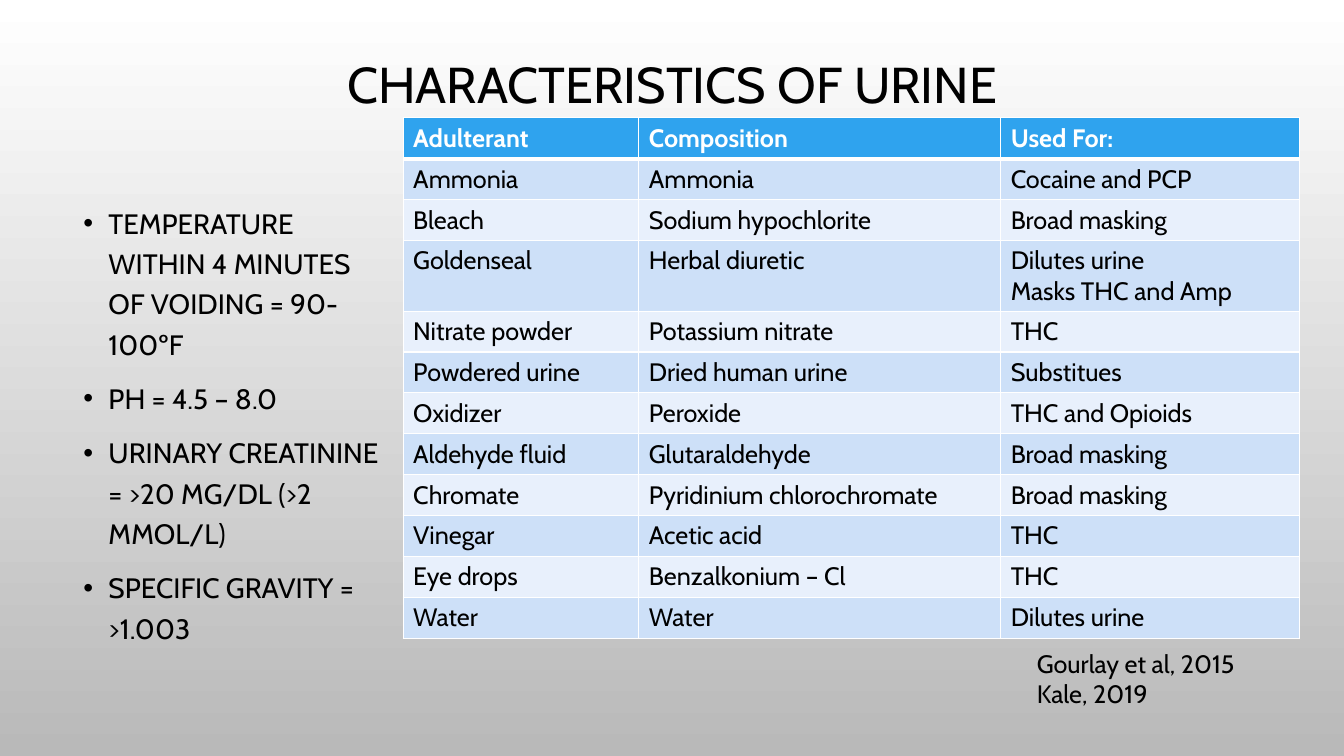
from pptx import Presentation
from pptx.dml.color import RGBColor
from pptx.enum.text import MSO_ANCHOR as Anchor, PP_ALIGN as Align
from pptx.oxml.ns import qn
from pptx.util import Cm, Pt
from lxml.etree import SubElement

FONT = "Cabin"
BLACK = RGBColor(0x00, 0x00, 0x00)
WHITE = RGBColor(0xFF, 0xFF, 0xFF)
GREY = RGBColor(0xB9, 0xB9, 0xB9)
HEADER_BLUE = RGBColor(0x2F, 0xA3, 0xEE)
BANDS = (RGBColor(0xE8, 0xF0, 0xFC), RGBColor(0xCD, 0xE0, 0xF8))

URINE_FACTS = [
    "TEMPERATURE WITHIN 4 MINUTES OF VOIDING = 90-100ºF",
    "PH = 4.5 – 8.0",
    "URINARY CREATININE = >20 MG/DL (>2 MMOL/L)",
    "SPECIFIC GRAVITY = >1.003",
]
ADULTERANTS = [
    ("Adulterant", "Composition", "Used For:"),
    ("Ammonia", "Ammonia", "Cocaine and PCP"),
    ("Bleach", "Sodium hypochlorite", "Broad masking"),
    ("Goldenseal", "Herbal diuretic", "Dilutes urine\nMasks THC and Amp"),
    ("Nitrate powder", "Potassium nitrate", "THC"),
    ("Powdered urine", "Dried human urine", "Substitues"),
    ("Oxidizer", "Peroxide", "THC and Opioids"),
    ("Aldehyde fluid", "Glutaraldehyde", "Broad masking"),
    ("Chromate", "Pyridinium chlorochromate", "Broad masking"),
    ("Vinegar", "Acetic acid", "THC"),
    ("Eye drops", "Benzalkonium – Cl", "THC"),
    ("Water", "Water", "Dilutes urine"),
]
COLUMN_WIDTHS = (5.94, 9.12, 7.52)
ROW_HEIGHT, TWO_LINE_HEIGHT = 1.03, 1.78


def add_bullet(paragraph):
    properties = paragraph._p.get_or_add_pPr()
    properties.set("marL", str(Cm(0.635)))
    properties.set("indent", str(-Cm(0.635)))
    color = SubElement(properties, qn("a:buClr"))
    SubElement(color, qn("a:srgbClr"), val=str(BLACK))
    SubElement(properties, qn("a:buFont"), typeface="Arial")
    SubElement(properties, qn("a:buChar"), char="•")


def write_text(frame, text, size=18, color=BLACK, bold=False, align=Align.LEFT,
               line_spacing=None, space_before=0, bullets=False):
    """Fill a text frame with one paragraph for each line of text."""
    for index, line in enumerate(text.split("\n")):
        paragraph = frame.add_paragraph() if index else frame.paragraphs[0]
        if bullets:
            add_bullet(paragraph)
        paragraph.alignment = align
        paragraph.line_spacing = line_spacing
        paragraph.space_before = Pt(space_before if index else 0)
        run = paragraph.add_run()
        run.text = line
        run.font.name, run.font.size, run.font.bold = FONT, Pt(size), bold
        run.font.color.rgb = color


def paint_background(slide):
    fill = slide.background.fill
    fill.gradient()
    fill.gradient_angle = 270
    for stop, color in zip(fill.gradient_stops, (WHITE, GREY)):
        stop.color.rgb = color


def place_title(slide, text):
    title = slide.shapes.title
    title.left, title.top = Cm(2.97), Cm(0.3)
    title.width, title.height = Cm(27.94), Cm(3.81)
    title.text_frame.vertical_anchor = Anchor.MIDDLE
    write_text(title.text_frame, text, size=36, align=Align.CENTER, line_spacing=0.9)


def add_text_box(slide, left, top, width, height, text, **text_format):
    box = slide.shapes.add_textbox(Cm(left), Cm(top), Cm(width), Cm(height))
    box.text_frame.word_wrap = True
    write_text(box.text_frame, text, **text_format)


def add_borders(cell, bottom_width):
    properties = cell._tc.get_or_add_tcPr()
    for side, width in (("L", 1), ("R", 1), ("T", 1), ("B", bottom_width)):
        line = SubElement(properties, qn(f"a:ln{side}"), w=str(Pt(width)))
        fill = SubElement(line, qn("a:solidFill"))
        SubElement(fill, qn("a:srgbClr"), val=str(WHITE))


def add_adulterant_table(slide, left, top):
    heights = [TWO_LINE_HEIGHT if any("\n" in text for text in row) else ROW_HEIGHT
               for row in ADULTERANTS]
    table = slide.shapes.add_table(
        len(heights), len(COLUMN_WIDTHS), Cm(left), Cm(top),
        Cm(sum(COLUMN_WIDTHS)), Cm(sum(heights))).table
    table.horz_banding = False
    for column, width in zip(table.columns, COLUMN_WIDTHS):
        column.width = Cm(width)
    for row_index, texts in enumerate(ADULTERANTS):
        table.rows[row_index].height = Cm(heights[row_index])
        is_header = row_index == 0
        for column_index, text in enumerate(texts):
            cell = table.cell(row_index, column_index)
            add_borders(cell, 3 if is_header else 1)
            cell.fill.solid()
            cell.fill.fore_color.rgb = HEADER_BLUE if is_header else BANDS[row_index % 2]
            write_text(cell.text_frame, text, bold=is_header,
                       color=WHITE if is_header else BLACK)


def main():
    presentation = Presentation()
    presentation.slide_width, presentation.slide_height = Cm(33.87), Cm(19.05)
    slide = presentation.slides.add_slide(presentation.slide_layouts[5])
    paint_background(slide)
    place_title(slide, "CHARACTERISTICS OF URINE")

    # Normal values on the left
    add_text_box(slide, 1.85, 4.9, 8.15, 11.63, "\n".join(URINE_FACTS),
                 size=20, line_spacing=1.2, space_before=10, bullets=True)

    # Adulterants and their sources
    add_adulterant_table(slide, 10.16, 2.97)
    add_text_box(slide, 25.88, 16.21, 6.32, 1.8, "Gourlay et al, 2015\nKale, 2019")

    presentation.save("out.pptx")


if __name__ == "__main__":
    main()
